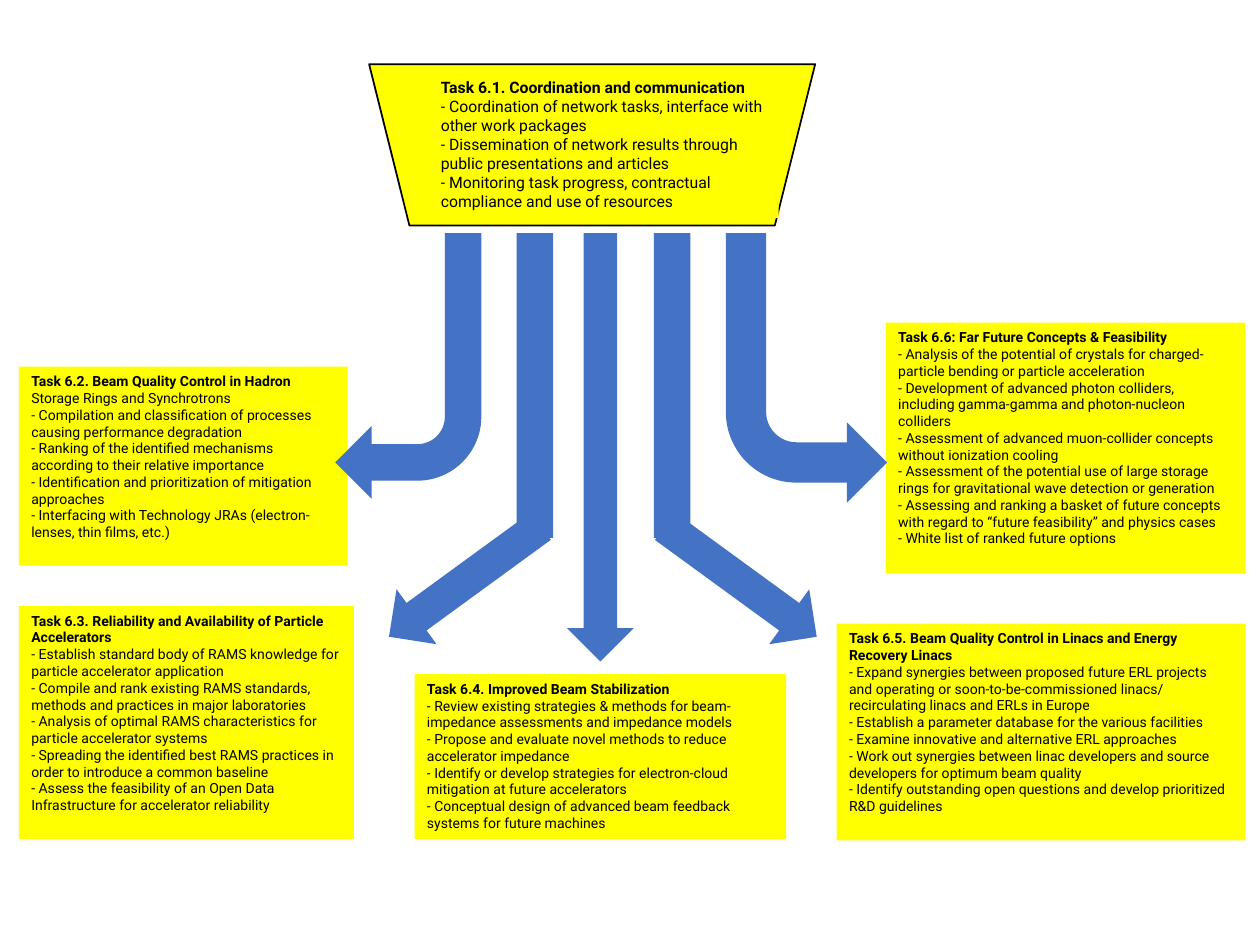
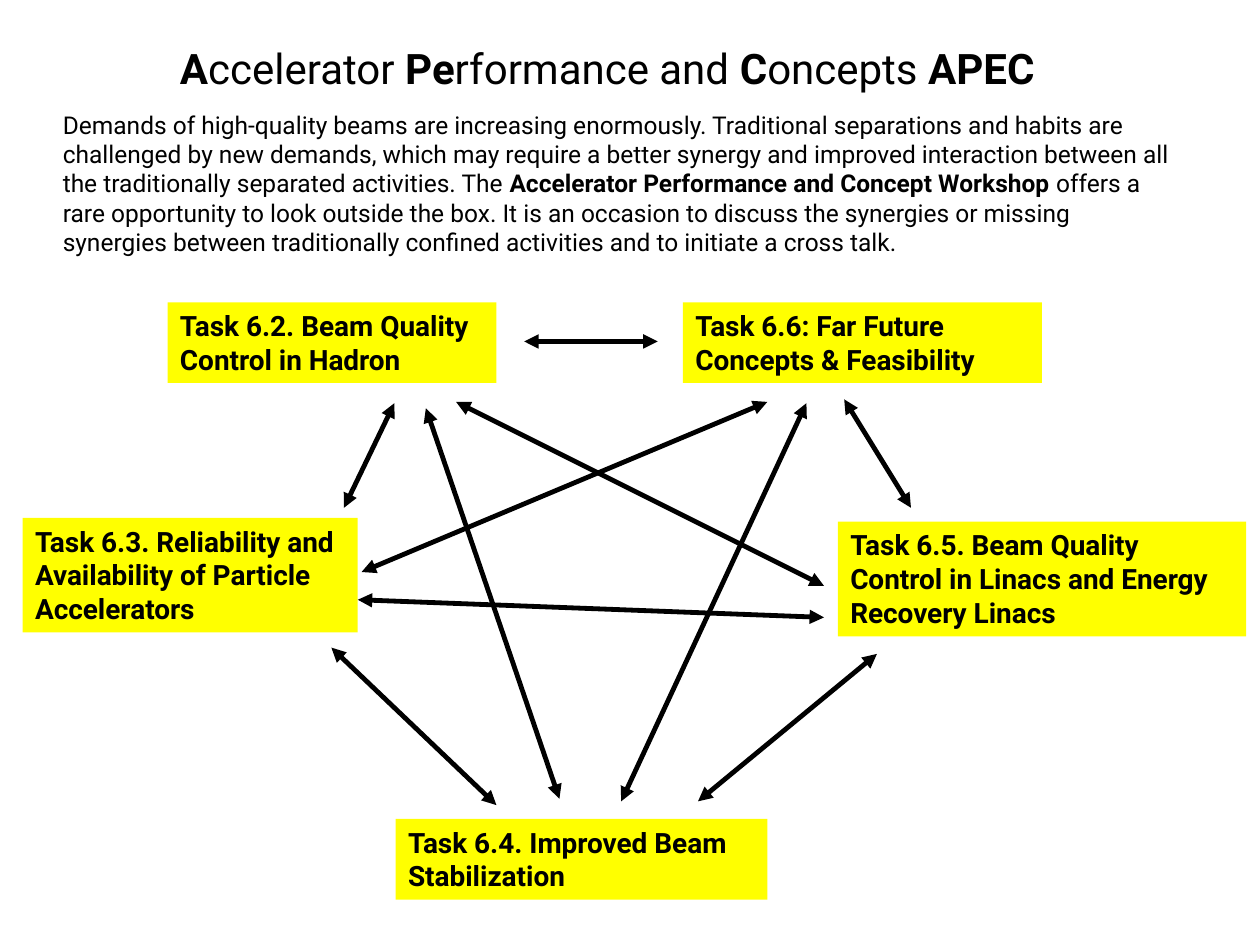
from lxml import etree
from pptx import Presentation
from pptx import util as u
from pptx.dml.color import RGBColor
from pptx.enum import shapes, text
from pptx.oxml.ns import qn

YELLOW, BLUE, BLACK = "FFFF00", "4472C4", "000000"
FONT = "Roboto"
hue = RGBColor.from_string
kinds = shapes.MSO_SHAPE
left, mid = text.PP_ALIGN.LEFT, text.PP_ALIGN.CENTER


def block(slide, kind, box, color, turn=0, flip=None):
    shape = slide.shapes.add_shape(kind, *map(u.Inches, box))
    shape.shadow.inherit = False
    shape.fill.solid()
    shape.fill.fore_color.rgb = hue(color)
    shape.line.fill.background()
    shape.rotation = turn
    if flip:
        shape.element.spPr.find(qn("a:xfrm")).set(flip, "1")
    return shape


def write(shape, lines, size, align=left):
    frame = shape.text_frame
    frame.word_wrap = True
    frame.auto_size = text.MSO_AUTO_SIZE.NONE
    frame.vertical_anchor = text.MSO_ANCHOR.TOP
    for i, line in enumerate(lines):
        para = frame.add_paragraph() if i else frame.paragraphs[0]
        para.alignment = align
        para.font.name = FONT
        para.font.size = u.Pt(size)
        para.font.color.rgb = hue(BLACK)
        for j, part in enumerate(line.split("*")):
            if part:
                run = para.add_run()
                run.text = part
                run.font.bold = j % 2 == 1


# Each task: heading, rest of first line, details, box on slide 1, box on slide 2
tasks = [
    ("Task 6.2. Beam Quality Control in Hadron", " Storage Rings and Synchrotrons", [
        "- Compilation and classification of processes causing performance degradation",
        "- Ranking of the identified mechanisms according to their relative importance",
        "- Identification and prioritization of mitigation approaches",
        "- Interfacing with Technology JRAs (electron-lenses, thin films, etc.)",
    ], (0.15, 2.91, 2.61, 1.58), (1.33, 2.4, 2.61, 0.64)),
    ("Task 6.3. Reliability and Availability of Particle Accelerators", "", [
        "- Establish standard body of RAMS knowledge for particle accelerator application",
        "- Compile and rank existing RAMS standards, methods and practices in major laboratories",
        "- Analysis of optimal RAMS characteristics for particle accelerator systems",
        "- Spreading the identified best RAMS practices in order to introduce a common baseline",
        "- Assess the feasibility of an Open Data Infrastructure for accelerator reliability",
    ], (0.15, 4.81, 2.66, 1.85), (0.18, 4.11, 2.66, 0.91)),
    ("Task 6.4. Improved Beam Stabilization", "", [
        "- Review existing strategies & methods for beam-impedance assessments and impedance models",
        "- Propose and evaluate novel methods to reduce accelerator impedance",
        "- Identify or develop strategies for electron-cloud mitigation at future accelerators",
        "- Conceptual design of advanced beam feedback systems for future machines",
    ], (3.29, 5.35, 2.95, 1.31), (3.14, 6.5, 2.95, 0.64)),
    ("Task 6.5. Beam Quality Control in Linacs and Energy Recovery Linacs", "", [
        "- Expand synergies between proposed future ERL projects and operating or "
        "soon-to-be-commissioned linacs/",
        "recirculating linacs and ERLs in Europe",
        "- Establish a parameter database for the various facilities",
        "- Examine innovative and alternative ERL approaches",
        "- Work out synergies between linac developers and source developers for optimum beam quality",
        "- Identify outstanding open questions and develop prioritized R&D guidelines",
    ], (6.64, 4.95, 3.24, 1.72), (6.65, 4.14, 3.24, 0.91)),
    ("Task 6.6: Far Future Concepts & Feasibility", "", [
        "- Analysis of the potential of crystals for charged-particle bending or particle acceleration",
        "- Development of advanced photon colliders, including gamma-gamma and photon-nucleon colliders",
        "- Assessment of advanced muon-collider concepts without ionization cooling",
        "- Assessment of the potential use of large storage rings for gravitational wave "
        "detection or generation",
        "- Assessing and ranking a basket of future concepts with regard to "
        "“future feasibility” and physics cases",
        "- White list of ranked future options",
    ], (7.03, 2.56, 2.85, 1.99), (5.42, 2.4, 2.85, 0.64)),
]

deck = Presentation()
deck.slide_width, deck.slide_height = u.Inches(10), u.Inches(7.5)

plan = deck.slides.add_slide(deck.slide_layouts[6])
funnel = block(plan, kinds.TRAPEZOID, (2.93, 0.51, 3.54, 1.28), YELLOW, flip="flipV")
funnel.line.color.rgb = hue(BLACK)
funnel.line.width = u.Pt(1)
write(block(plan, kinds.RECTANGLE, (3.4, 0.57, 2.78, 1.16), YELLOW), [
    "*Task 6.1. Coordination and communication*",
    "- Coordination of network tasks, interface with other work packages",
    "- Dissemination of network results through public presentations and articles",
    "- Monitoring task progress, contractual compliance and use of resources",
], 9)
for head, rest, items, box, _ in tasks:
    write(block(plan, kinds.RECTANGLE, box, YELLOW), [f"*{head}*{rest}"] + items, 8)

top = 1.85
block(plan, kinds.BENT_ARROW, (2.66, top, 1.16, 2.11), BLUE, 180)
block(plan, kinds.BENT_ARROW, (5.76, top, 1.28, 2.14), BLUE, 180, "flipH")
block(plan, kinds.DOWN_ARROW, (4.5, top, 0.53, 3.4), BLUE)
for tip, stem, turn in [(5.61, 5.19, 306.1), (3.42, 4.1, 53.9)]:
    block(plan, kinds.DOWN_ARROW, (tip, 3.87, 0.54, 1.49), BLUE, turn)
    block(plan, kinds.RECTANGLE, (stem, top, 0.29, 2.42), BLUE)

web = deck.slides.add_slide(deck.slide_layouts[5])
title = web.shapes.title
title.left, title.top, title.width, title.height = map(u.Inches, (1.01, 0.29, 7.62, 0.5))
write(title, ["*A*ccelerator *Pe*rformance and *C*oncepts *APEC*"], 24, mid)
intro = web.shapes.add_textbox(*map(u.Inches, (0.4, 0.82, 9.07, 1.28)))
write(intro, [
    "Demands of high-quality beams are increasing enormously. Traditional separations and "
    "habits are challenged by new demands, which may require a better synergy and improved "
    "interaction between all the traditionally separated activities. The "
    "*Accelerator Performance and Concept Workshop *offers a rare opportunity to look outside "
    "the box. It is an occasion to discuss the synergies or missing synergies between "
    "traditionally confined activities and to initiate a cross talk.",
], 14)
for head, _, _, _, box in tasks:
    write(block(web, kinds.RECTANGLE, box, YELLOW), [f"*{head}*"], 16)

links = [
    (3.13, 3.2, 2.73, 4.03), (3.38, 3.24, 4.44, 6.34), (3.62, 3.19, 6.54, 4.65),
    (4.16, 2.71, 5.22, 2.71), (3.94, 6.39, 2.63, 5.14), (6.54, 4.9, 2.84, 4.76),
    (6.09, 3.19, 2.87, 4.54), (6.4, 3.2, 4.93, 6.36), (6.96, 5.19, 5.54, 6.36),
    (6.7, 3.17, 7.23, 4.03),
]
for ends in links:
    link = web.shapes.add_connector(shapes.MSO_CONNECTOR.STRAIGHT, *map(u.Inches, ends))
    link.line.color.rgb = hue(BLACK)
    link.line.width = u.Pt(2.75)
    props = link.element.spPr
    for end in ("a:headEnd", "a:tailEnd"):
        etree.SubElement(props.find(qn("a:ln")), qn(end), type="triangle")
    etree.SubElement(props, qn("a:effectLst"))

deck.save("out.pptx")
